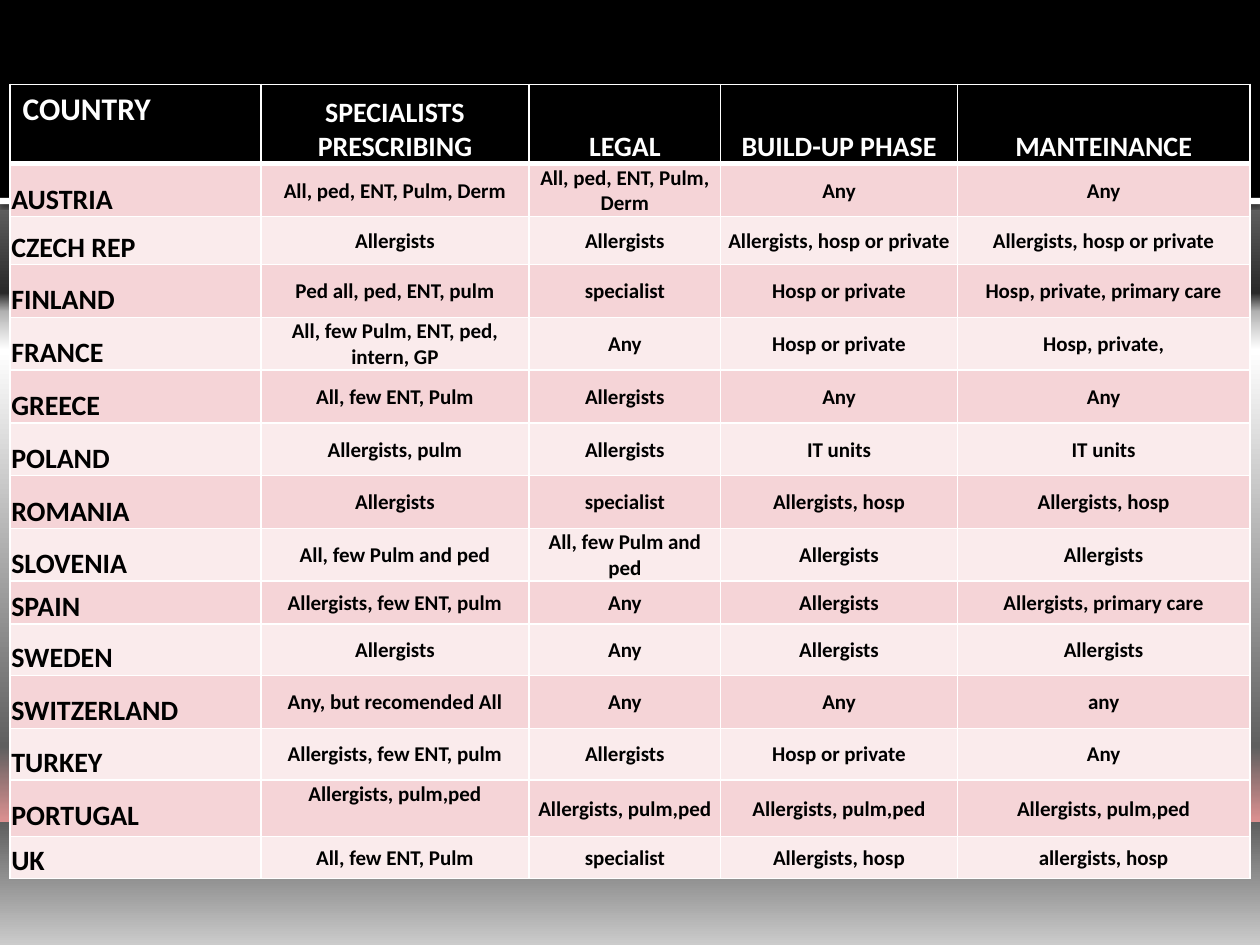
"""Build a one-slide table of allergen immunotherapy practice by country."""
from lxml import etree
from pptx import Presentation
from pptx.dml.color import RGBColor
from pptx.enum import shapes, text
from pptx.oxml import ns
from pptx.util import Inches, Pt

THEME = {
    "font": "Calibri",
    "white": "FFFFFF",
    "black": "000000",
    "bands": ("F5D4D7", "FAEBEC"),
    "corner_size": 18,
    "label_size": 16,
    "body_size": 12,
    "border": 1,
    "header_border": 3,
    "backdrop": [
        (0, "CBCBCB"), (13, "5F5F5F"), (13, "DD9191"), (21, "5F5F5F"), (63, "FFFFFF"),
        (67, "B2B2B2"), (69, "292929"), (82, "777777"), (100, "EAEAEA"),
    ],
}

HEADER = ("COUNTRY", "SPECIALISTS PRESCRIBING", "LEGAL", "BUILD-UP PHASE", "MANTEINANCE")
COUNTRIES = [
    ("AUSTRIA", "All, ped, ENT, Pulm, Derm", "All, ped, ENT, Pulm, Derm", "Any", "Any"),
    ("CZECH REP", "Allergists", "Allergists", "Allergists, hosp or private",
     "Allergists, hosp or private"),
    ("FINLAND", "Ped all, ped, ENT, pulm", "specialist", "Hosp or private",
     "Hosp, private, primary care"),
    ("FRANCE", "All, few Pulm, ENT, ped, intern, GP", "Any", "Hosp or private",
     "Hosp, private,"),
    ("GREECE", "All, few ENT, Pulm", "Allergists", "Any", "Any"),
    ("POLAND", "Allergists, pulm", "Allergists", "IT units", "IT units"),
    ("ROMANIA", "Allergists", "specialist", "Allergists, hosp", "Allergists, hosp"),
    ("SLOVENIA", "All, few Pulm and ped", "All, few Pulm and ped", "Allergists", "Allergists"),
    ("SPAIN", "Allergists, few ENT, pulm", "Any", "Allergists", "Allergists, primary care"),
    ("SWEDEN", "Allergists", "Any", "Allergists", "Allergists"),
    ("SWITZERLAND", "Any, but recomended All", "Any", "Any", "any"),
    ("TURKEY", "Allergists, few ENT, pulm", "Allergists", "Hosp or private", "Any"),
    ("PORTUGAL", "Allergists, pulm,ped", "Allergists, pulm,ped", "Allergists, pulm,ped",
     "Allergists, pulm,ped"),
    ("UK", "All, few ENT, Pulm", "specialist", "Allergists, hosp", "allergists, hosp"),
]
COLUMN_WIDTHS = (1.99, 2.13, 1.52, 1.88, 2.32)
ROW_HEIGHTS = (0.63, 0.42, 0.38, 0.42, 0.41, 0.42, 0.42, 0.42, 0.41,
               0.34, 0.41, 0.42, 0.41, 0.45, 0.33)
TALL_LINE_LABELS = ("SWITZERLAND", "PORTUGAL")
TOP_ANCHORED = {("PORTUGAL", 1)}
BANNERS = [((0, 1.57, 10, 0.05), "white"), ((0, 0, 10, 1.57), "black")]


def add_xml(parent, tag, **attributes):
    return etree.SubElement(parent, ns.qn(tag), attributes)


def paint_backdrop(slide):
    fill = slide.background.fill
    fill.gradient()
    gradient = slide.element.find(".//" + ns.qn("a:gradFill"))
    for child in list(gradient):
        gradient.remove(child)
    stops = add_xml(gradient, "a:gsLst")
    for percent, color in THEME["backdrop"]:
        stop = add_xml(stops, "a:gs", pos=str(percent * 1000))
        add_xml(stop, "a:srgbClr", val=color)
    add_xml(gradient, "a:lin", ang=str(270 * 60000), scaled="0")


def add_banner(slide, box, color):
    banner = slide.shapes.add_shape(shapes.MSO_SHAPE.RECTANGLE, *map(Inches, box))
    banner.shadow.inherit = False
    banner.fill.solid()
    banner.fill.fore_color.rgb = RGBColor.from_string(THEME[color])
    banner.line.fill.background()
    return banner


def add_soft_shadow(banner):
    effects = banner.element.spPr.find(ns.qn("a:effectLst"))
    shadow = add_xml(effects, "a:outerShdw", blurRad=str(Pt(2.5)), dist=str(Pt(0.8)),
                     dir=str(90 * 60000), algn="t", rotWithShape="0")
    tint = add_xml(shadow, "a:srgbClr", val=THEME["black"])
    add_xml(tint, "a:alpha", val="60000")


def add_borders(cell, row):
    properties = cell._tc.get_or_add_tcPr()
    heavy_side = {0: "B", 1: "T"}.get(row)
    for position, side in enumerate("LRTB"):
        width = THEME["header_border" if side == heavy_side else "border"]
        line = add_xml(properties, "a:ln" + side, w=str(Pt(width)))
        add_xml(add_xml(line, "a:solidFill"), "a:srgbClr", val=THEME["white"])
        properties.insert(position, line)


def cell_format(row, column, country):
    anchor, align = text.MSO_ANCHOR, text.PP_ALIGN
    is_label = row == 0 or column == 0
    is_corner = row == 0 and column == 0
    is_tall = column == 0 and country in TALL_LINE_LABELS
    at_top = is_corner or is_tall or (country, column) in TOP_ANCHORED
    size = "corner_size" if is_corner else "label_size" if is_label else "body_size"
    inset = Inches(0.01)
    margins = {} if is_corner else {
        "margin_left": inset, "margin_right": inset, "margin_top": inset, "margin_bottom": 0}
    return {
        "cell": {
            "vertical_anchor": (anchor.TOP if at_top else
                                anchor.BOTTOM if is_label else anchor.MIDDLE),
            **margins,
        },
        "paragraph": {
            "alignment": align.LEFT if column == 0 else align.CENTER,
            "line_spacing": 1.5 if is_tall else 1.0,
        },
        "font": {"name": THEME["font"], "size": Pt(THEME[size]), "bold": True},
    }


def fill_cell(cell, words, row, column, country):
    cell.text = words
    paragraph = cell.text_frame.paragraphs[0]
    font = paragraph.runs[0].font
    targets = {"cell": cell, "paragraph": paragraph, "font": font}
    for part, values in cell_format(row, column, country).items():
        for attribute, value in values.items():
            setattr(targets[part], attribute, value)
    font.color.rgb = RGBColor.from_string(THEME["black" if row else "white"])
    cell.fill.solid()
    shade = THEME["bands"][(row - 1) % 2] if row else THEME["black"]
    cell.fill.fore_color.rgb = RGBColor.from_string(shade)
    add_borders(cell, row)


def add_practice_table(slide):
    rows = [HEADER, *COUNTRIES]
    box = (0.08, 0.67, sum(COLUMN_WIDTHS), sum(ROW_HEIGHTS))
    practice = slide.shapes.add_table(len(rows), len(HEADER), *map(Inches, box)).table
    practice.horz_banding = False
    for column, width in zip(practice.columns, COLUMN_WIDTHS):
        column.width = Inches(width)
    for row, height in zip(practice.rows, ROW_HEIGHTS):
        row.height = Inches(height)
    for r, entries in enumerate(rows):
        for c, words in enumerate(entries):
            fill_cell(practice.cell(r, c), words, r, c, entries[0])


def main():
    deck = Presentation()
    deck.slide_width, deck.slide_height = Inches(10), Inches(7.5)
    slide = deck.slides.add_slide(deck.slide_layouts[6])
    paint_backdrop(slide)
    stripe, _ = [add_banner(slide, box, color) for box, color in BANNERS]
    add_soft_shadow(stripe)
    add_practice_table(slide)
    deck.save("out.pptx")


if __name__ == "__main__":
    main()
